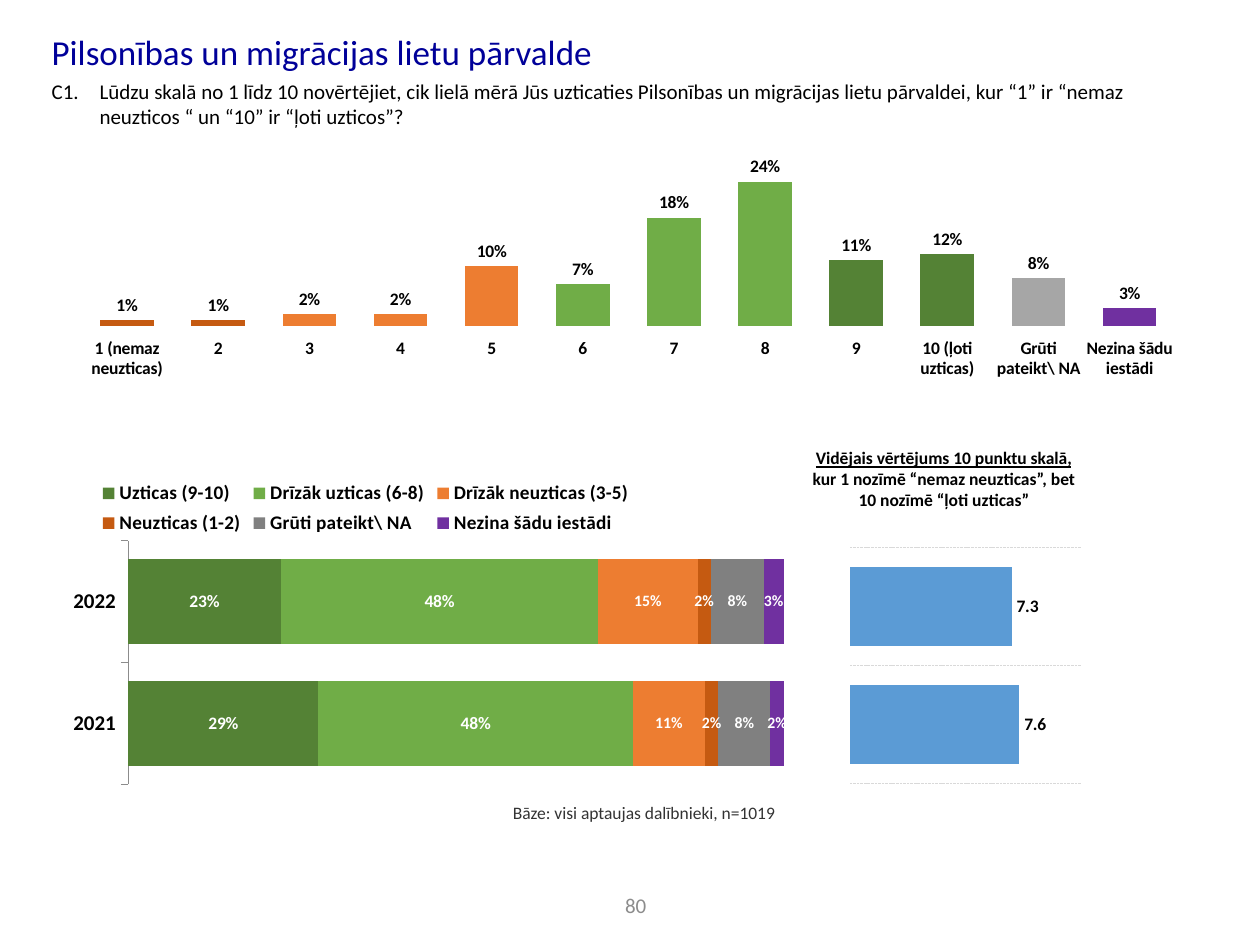
from pptx import Presentation
from pptx.chart.data import CategoryChartData
from pptx.dml.color import RGBColor
from pptx.enum.chart import (XL_CHART_TYPE, XL_LABEL_POSITION,
                             XL_LEGEND_POSITION, XL_TICK_MARK)
from pptx.enum.dml import MSO_LINE
from pptx.enum.text import MSO_ANCHOR, MSO_AUTO_SIZE, PP_ALIGN
from pptx.oxml import parse_xml
from pptx.oxml.ns import nsdecls, qn
from pptx.util import Inches, Pt

NAVY = RGBColor(0x00, 0x00, 0x99)
BLACK = RGBColor(0x00, 0x00, 0x00)
WHITE = RGBColor(0xFF, 0xFF, 0xFF)
DARK = RGBColor(0x33, 0x33, 0x33)
DIM = RGBColor(0x8C, 0x8C, 0x8C)
PALE = RGBColor(0xD9, 0xD9, 0xD9)
GREEN = RGBColor(0x54, 0x82, 0x35)
LIME = RGBColor(0x70, 0xAD, 0x47)
ORANGE = RGBColor(0xED, 0x7D, 0x31)
RUST = RGBColor(0xC5, 0x5A, 0x11)
GREY = RGBColor(0x80, 0x80, 0x80)
SILVER = RGBColor(0xA6, 0xA6, 0xA6)
PURPLE = RGBColor(0x70, 0x30, 0xA0)
BLUE = RGBColor(0x5B, 0x9B, 0xD5)

UNSURE = "Grūti pateikt\\ NA"
UNKNOWN = "Nezina šādu iestādi"
SCORES = [("1 (nemaz neuzticas)", 0.01, RUST), ("2", 0.01, RUST),
          ("3", 0.02, ORANGE), ("4", 0.02, ORANGE), ("5", 0.10, ORANGE),
          ("6", 0.07, LIME), ("7", 0.18, LIME), ("8", 0.24, LIME),
          ("9", 0.11, GREEN), ("10 (ļoti uzticas)", 0.12, GREEN),
          (UNSURE, 0.08, SILVER), (UNKNOWN, 0.03, PURPLE)]
GROUPS = [("Uzticas (9-10)", (0.29, 0.23), GREEN, 10),
          ("Drīzāk uzticas (6-8)", (0.48, 0.48), LIME, 10),
          ("Drīzāk neuzticas (3-5)", (0.11, 0.15), ORANGE, 9),
          ("Neuzticas (1-2)", (0.02, 0.02), RUST, 9),
          (UNSURE, (0.08, 0.08), GREY, 9),
          (UNKNOWN, (0.02, 0.03), PURPLE, 9)]


class Deck:
    """Holds the style and the current slide, and adds each kind of element."""

    def __init__(self, font):
        self.font = font
        self.file = Presentation()
        self.file.slide_width = Inches(10)
        self.file.slide_height = Inches(7.5)
        self.slide = self.file.slides.add_slide(self.file.slide_layouts[1])

    def style(self, font, size, color=BLACK, bold=False):
        font.name = self.font
        font.size = Pt(size)
        font.bold = bold
        font.color.rgb = color

    def fill_text(self, shape, parts, size, color, align, anchor, bold=False):
        frame = shape.text_frame
        frame.word_wrap = True
        frame.auto_size = MSO_AUTO_SIZE.NONE
        frame.vertical_anchor = anchor
        para = frame.paragraphs[0]
        para.text = parts[0]
        for part in parts[1:]:
            para.add_run().text = part
        para.alignment = align
        para.space_before = Pt(0)
        for run in para.runs:
            self.style(run.font, size, color, bold)
        return para

    def holder(self, index, box, text, size, color, anchor):
        shape = self.slide.placeholders[index]
        shape.left, shape.top, shape.width, shape.height = map(Inches, box)
        return self.fill_text(shape, [text], size, color, PP_ALIGN.LEFT, anchor)

    def hang(self, para, indent):
        props = para._p.get_or_add_pPr()
        props.set("marL", str(Inches(indent)))
        props.set("indent", str(-Inches(indent)))
        props.append(parse_xml(f"<a:buNone {nsdecls('a')}/>"))

    def label(self, box, parts, size, color=BLACK, align=PP_ALIGN.CENTER,
              anchor=MSO_ANCHOR.TOP, bold=False, inset=True):
        shape = self.slide.shapes.add_textbox(*map(Inches, box))
        if not inset:
            frame = shape.text_frame
            frame.margin_left = frame.margin_right = 0
            frame.margin_top = frame.margin_bottom = 0
        return self.fill_text(shape, parts, size, color, align, anchor, bold)

    def place(self, parent, index, area, inner=False):
        for old in parent.findall(qn("c:layout")):
            parent.remove(old)
        target = '<c:layoutTarget val="inner"/>' if inner else ""
        modes = "".join(f'<c:{key}Mode val="edge"/>' for key in "xy")
        sizes = "".join(f'<c:{key} val="{val}"/>' for key, val in zip("xywh", area))
        parent.insert(index, parse_xml(
            f"<c:layout {nsdecls('c')}><c:manualLayout>{target}{modes}{sizes}"
            "</c:manualLayout></c:layout>"))

    def chart(self, kind, box, names, rows, area, gap, limits, form):
        data = CategoryChartData(number_format=form)
        data.categories = names
        for name, values in rows:
            data.add_series(name, values)
        chart = self.slide.shapes.add_chart(kind, *map(Inches, box), data).chart
        chart.has_title = chart.has_legend = False
        self.style(chart.font, 10)
        chart.plots[0].gap_width = gap
        chart.plots[0].vary_by_categories = False
        axis = chart.value_axis
        axis.visible = axis.has_major_gridlines = False
        axis.minimum_scale, axis.maximum_scale = limits
        self.place(chart._chartSpace.chart.plotArea, 0, area, True)
        return chart

    def paint(self, series, fill, size, color, form, spot):
        series.format.fill.solid()
        series.format.fill.fore_color.rgb = fill
        series.invert_if_negative = False
        labels = series.data_labels
        labels.show_value = True
        labels.number_format = form
        labels.number_format_is_linked = False
        labels.position = spot
        self.style(labels.font, size, color, True)

    def columns(self, box):
        names, values, fills = zip(*SCORES)
        chart = self.chart(XL_CHART_TYPE.COLUMN_CLUSTERED, box, names,
                           [("Series 1", values)], (0.022, 0.021, 0.971, 0.723),
                           70, (0, 0.4), "0%")
        series = chart.series[0]
        self.paint(series, RUST, 10, BLACK, "0%", XL_LABEL_POSITION.OUTSIDE_END)
        for index, fill in enumerate(fills):
            if fill != RUST:
                point = series.points[index].format.fill
                point.solid()
                point.fore_color.rgb = fill
        axis = chart.category_axis
        axis.format.line.fill.background()
        self.style(axis.tick_labels.font, 10, bold=True)

    def stack(self, box):
        rows = [group[:2] for group in GROUPS]
        chart = self.chart(XL_CHART_TYPE.BAR_STACKED_100, box, ["2021", "2022"],
                           rows, (0.111, 0.219, 0.839, 0.781), 44, (0, 1), "0%")
        chart.plots[0].overlap = 100
        for series, group in zip(chart.series, GROUPS):
            self.paint(series, group[2], group[3], WHITE, "0%",
                       XL_LABEL_POSITION.CENTER)
        axis = chart.category_axis
        axis.major_tick_mark = XL_TICK_MARK.OUTSIDE
        axis.format.line.color.rgb = DIM
        self.style(axis.tick_labels.font, 12, bold=True)
        chart.has_legend = True
        legend = chart.legend
        legend.position = XL_LEGEND_POSITION.TOP
        legend.include_in_layout = False
        self.style(legend.font, 11, bold=True)
        self.place(legend._element, 1, (0.07, 0.01, 0.69, 0.21))

    def means(self, box):
        chart = self.chart(XL_CHART_TYPE.BAR_CLUSTERED, box, ["1", "2"],
                           [("Series 1", (7.6, 7.3))], (0.05, 0, 0.924, 1),
                           50, (1, 10), "0.0")
        self.paint(chart.series[0], BLUE, 10, BLACK, "0.0",
                   XL_LABEL_POSITION.OUTSIDE_END)
        axis = chart.category_axis
        axis.visible = False
        axis.has_major_gridlines = True
        line = axis.major_gridlines.format.line
        line.color.rgb = PALE
        line.width = Pt(0.5)
        line.dash_style = MSO_LINE.SQUARE_DOT


def main():
    deck = Deck("Calibri")
    deck.holder(0, (0.31, 0.16, 9.37, 0.49),
                "Pilsonības un migrācijas lietu pārvalde", 20, NAVY, MSO_ANCHOR.MIDDLE)
    query = deck.holder(
        1, (0.31, 0.57, 9.02, 0.78),
        "C1. \tLūdzu skalā no 1 līdz 10 novērtējiet, cik lielā mērā Jūs uzticaties "
        "Pilsonības un migrācijas lietu pārvaldei, kur “1” ir “nemaz neuzticos “ "
        "un “10” ir “ļoti uzticos”?", 12, BLACK, MSO_ANCHOR.TOP)
    deck.hang(query, 0.38)
    deck.columns((0.45, 0.62, 8.94, 2.65))
    deck.stack((0.33, 3.75, 6.2, 2.48))
    deck.means((6.65, 4.34, 1.98, 1.88))
    mean = deck.label((6.35, 3.5, 2.28, 0.61),
                      ["Vidējais vērtējums 10 punktu skalā, ",
                       "kur 1 nozīmē “nemaz neuzticas”, bet 10 nozīmē “ļoti uzticas”"],
                      10, bold=True)
    mean.runs[0].font.underline = True
    deck.label((3, 6.29, 3.15, 0.24), ["Bāze: visi aptaujas dalībnieki, n=1019"],
               10, DARK, PP_ALIGN.RIGHT, MSO_ANCHOR.BOTTOM, inset=False)
    deck.label((4.77, 7.04, 0.55, 0.28), ["80"], 12, DIM, anchor=MSO_ANCHOR.MIDDLE)
    deck.file.save("out.pptx")


if __name__ == "__main__":
    main()
